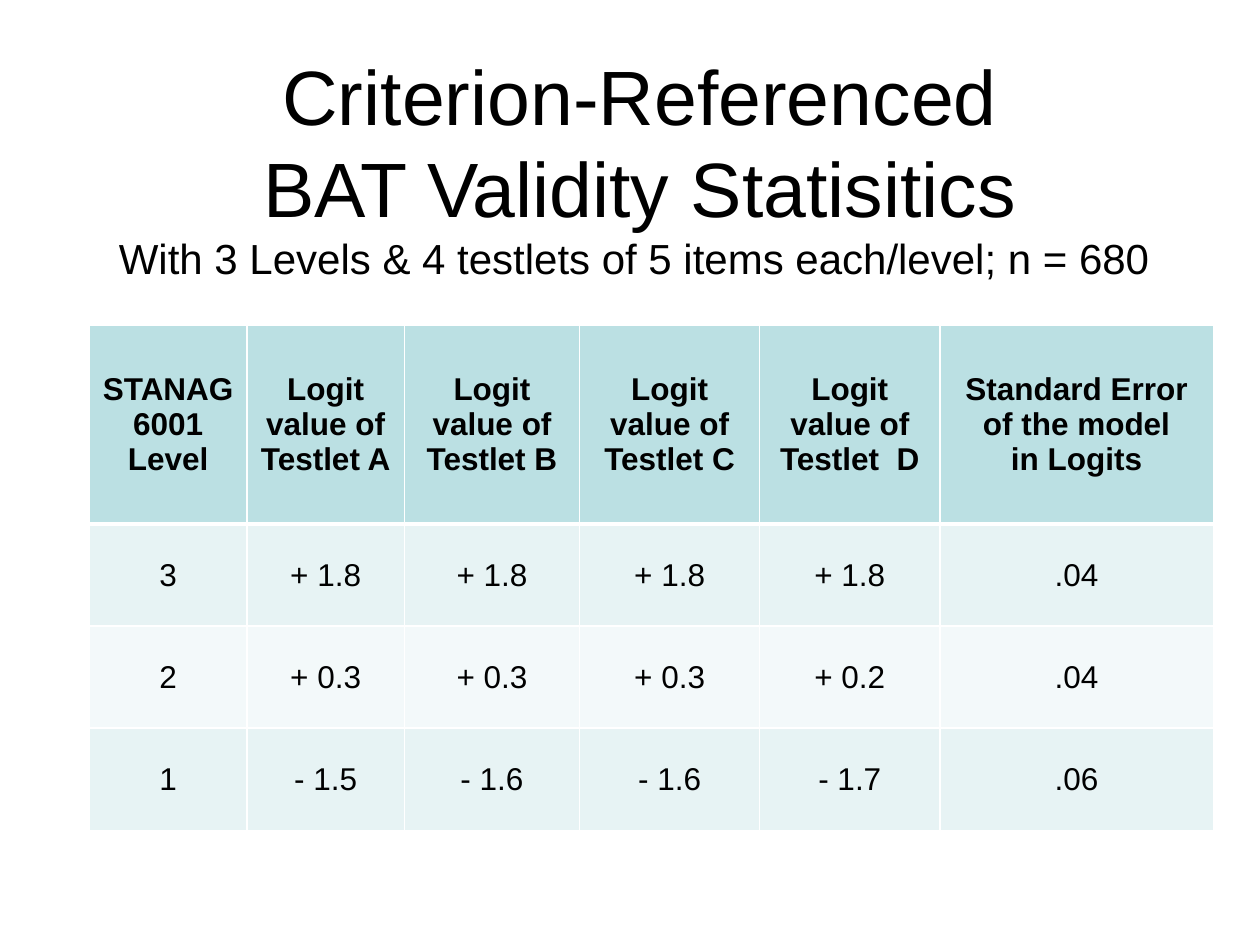
from dataclasses import dataclass

from lxml.etree import SubElement
from pptx import Presentation
from pptx.dml.color import RGBColor
from pptx.enum.text import MSO_ANCHOR as Anchor, MSO_AUTO_SIZE as AutoSize, PP_ALIGN as Align
from pptx.oxml.ns import qn
from pptx.util import Inches, Pt

BLACK, WHITE = "000000", "FFFFFF"
HEADER_FILL, ODD_FILL, EVEN_FILL = "BBE0E3", "E7F3F4", "F3F9FA"


@dataclass
class TableRow:
    texts: list[str]
    height: float
    fill: str
    top: float = 1
    bottom: float = 1
    bold: bool = False


COLUMN_WIDTHS = [1.25, 1.25, 1.39, 1.43, 1.43, 2.17]
HEADINGS = [
    "STANAG 6001 Level",
    *(f"Logit value of Testlet {name}" for name in ("A", "B", "C", " D")),
    "Standard Error of the model\nin Logits",
]
ROWS = [
    TableRow(HEADINGS, 1.58, HEADER_FILL, bottom=3, bold=True),
    TableRow(["3", "+ 1.8", "+ 1.8", "+ 1.8", "+ 1.8", ".04"], 0.81, ODD_FILL, top=3),
    TableRow(["2", "+ 0.3", "+ 0.3", "+ 0.3", "+ 0.2", ".04"], 0.81, EVEN_FILL),
    TableRow(["1", "- 1.5", "- 1.6", "- 1.6", "- 1.7", ".06"], 0.81, ODD_FILL),
]


def rgb(color: str) -> RGBColor:
    return RGBColor.from_string(color)


def format_font(font, size: float, bold: bool = False) -> None:
    for name, value in {"name": "Arial", "size": Pt(size), "bold": bold}.items():
        setattr(font, name, value)
    font.color.rgb = rgb(BLACK)


def add_border(cell, side: str, width: float) -> None:
    line = SubElement(cell._tc.get_or_add_tcPr(), qn(f"a:ln{side}"), w=str(Pt(width)))
    SubElement(SubElement(line, qn("a:solidFill")), qn("a:srgbClr"), val=WHITE)


def fill_cell(cell, text: str, row: TableRow) -> None:
    for side, width in {"L": 1, "R": 1, "T": row.top, "B": row.bottom}.items():
        add_border(cell, side, width)
    cell.fill.solid()
    cell.fill.fore_color.rgb = rgb(row.fill)
    cell.vertical_anchor = Anchor.MIDDLE
    cell.text = text
    for paragraph in cell.text_frame.paragraphs:
        paragraph.alignment = Align.CENTER
        format_font(paragraph.runs[0].font, 18, row.bold)


def add_title(slide) -> None:
    title = slide.shapes.title
    place = {"left": 0.58, "top": 0.3, "width": 9, "height": 2.03}
    for name, value in place.items():
        setattr(title, name, Inches(value))
    frame = title.text_frame
    for name, value in {"word_wrap": True, "auto_size": AutoSize.NONE,
                        "vertical_anchor": Anchor.MIDDLE}.items():
        setattr(frame, name, value)
    paragraph = frame.paragraphs[0]
    paragraph.alignment = Align.CENTER
    lines = [
        ("Criterion-Referenced", 44),
        ("BAT Validity Statisitics", 44),
        ("With 3 Levels & 4 testlets of 5 items each/level; n = 680 ", 24),
    ]
    for index, (text, size) in enumerate(lines):
        if index:
            paragraph.add_line_break()
        run = paragraph.add_run()
        run.text = text
        format_font(run.font, size)


def add_statistics_table(slide) -> None:
    height = sum(row.height for row in ROWS)
    table = slide.shapes.add_table(
        len(ROWS), len(COLUMN_WIDTHS), Inches(0.71), Inches(2.58),
        Inches(sum(COLUMN_WIDTHS)), Inches(height)).table
    for column, width in zip(table.columns, COLUMN_WIDTHS):
        column.width = Inches(width)
    for table_row, row in zip(table.rows, ROWS):
        table_row.height = Inches(row.height)
        for cell, text in zip(table_row.cells, row.texts):
            fill_cell(cell, text, row)


def main() -> None:
    presentation = Presentation()
    presentation.slide_width, presentation.slide_height = Inches(10), Inches(7.5)
    # Title-only layout
    slide = presentation.slides.add_slide(presentation.slide_layouts[5])
    add_title(slide)
    add_statistics_table(slide)
    presentation.save("out.pptx")


if __name__ == "__main__":
    main()
